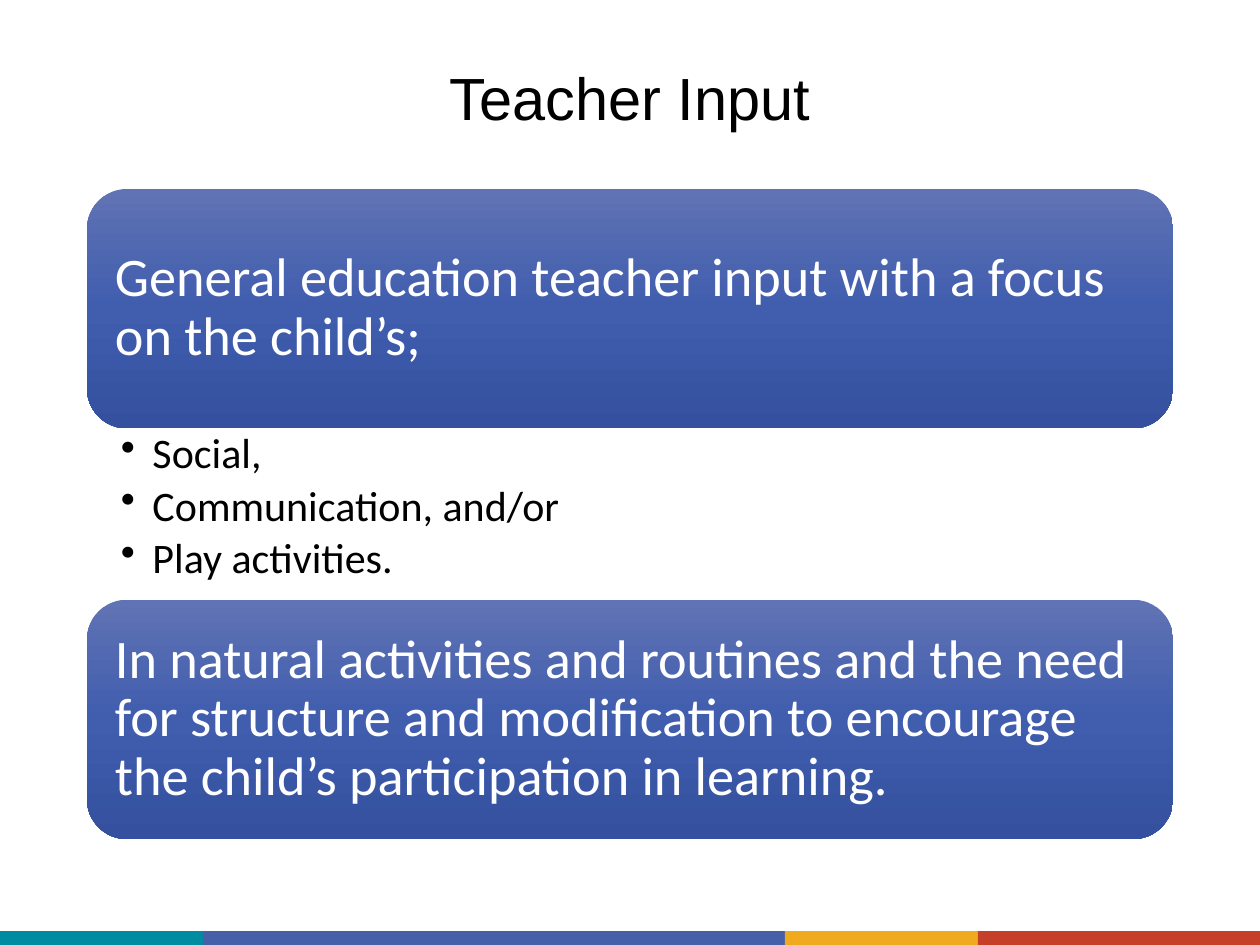
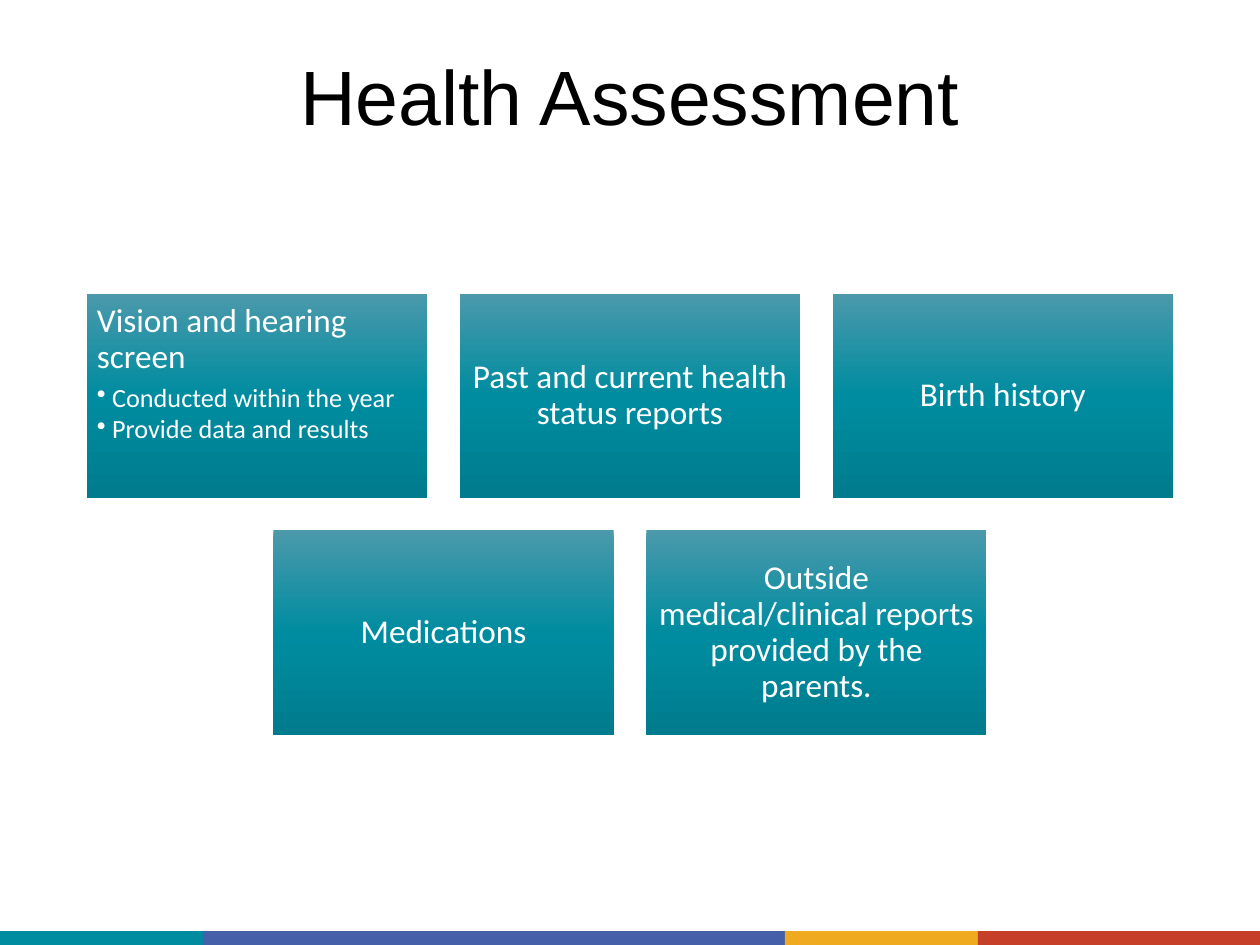
from copy import deepcopy

from pptx import Presentation
from pptx import util as u
from pptx.dml.color import RGBColor
from pptx.enum import shapes, text
from pptx.oxml.ns import qn

WHITE, BLACK = "FFFFFF", "000000"
BLUE_FADE = ("6073B4", "405DAE", "34509F")
TEAL_FADE = ("4B99AB", "008CA0", "007C8E")
BANDS = (("008CA0", 1.61), ("455FA9", 4.62), ("EFAA1F", 1.53), ("C63F28", 2.24))
LEFT, WIDTH = 0.69, 8.62
CENTER, MIDDLE = text.PP_ALIGN.CENTER, text.MSO_ANCHOR.MIDDLE
TOP = text.MSO_ANCHOR.TOP


def color(value):
    return RGBColor.from_string(value)


class Deck:
    title_font, body_font = "Arial", "Calibri"
    line_spacing = 0.9

    def __init__(self):
        self.deck = Presentation()
        self.deck.slide_width, self.deck.slide_height = u.Inches(10), u.Inches(7.5)
        self.page = None

    def add_page(self, title, size):
        self.page = self.deck.slides.add_slide(self.deck.slide_layouts[6])
        left = 0
        for fill, width in BANDS:
            band = self.shape("RECTANGLE", left, 7.39, width, 0.11)
            band.fill.solid()
            band.fill.fore_color.rgb = color(fill)
            left += width
        box = self.text_box(LEFT, 0.4, WIDTH, 0.8)
        self.frame(box, MIDDLE, (0.1, 0.05, 0.1, 0.05))
        self.add_para(box, title, size, BLACK, align=CENTER, font=self.title_font)

    def shape(self, kind, left, top, width, height):
        box = self.page.shapes.add_shape(
            shapes.MSO_SHAPE[kind], *map(u.Inches, (left, top, width, height)))
        box.shadow.inherit = False
        box.line.fill.background()
        return box

    def text_box(self, left, top, width, height):
        return self.page.shapes.add_textbox(*map(u.Inches, (left, top, width, height)))

    def frame(self, box, anchor, insets):
        frame = box.text_frame
        frame.word_wrap = True
        frame.vertical_anchor = anchor
        frame.margin_left, frame.margin_top, frame.margin_right, frame.margin_bottom = map(
            u.Inches, insets)

    def panel(self, kind, place, fade, inset, anchor=MIDDLE):
        box = self.shape(kind, *place)
        box.fill.gradient()
        box.fill.gradient_angle = 270
        first = box._element.spPr.find(qn("a:gradFill")).find(qn("a:gsLst"))[0]
        first.addnext(deepcopy(first))
        for stop, position, value in zip(box.fill.gradient_stops, (0, 0.5, 1), fade):
            stop.position = position
            stop.color.rgb = color(value)
        self.frame(box, anchor, (inset,) * 4)
        return box

    def add_para(self, box, words, size, ink, gap=0, align=text.PP_ALIGN.LEFT,
                 indent=0, font=None):
        frame = box.text_frame
        para = frame.add_paragraph() if frame.text else frame.paragraphs[0]
        para.text = words
        if indent:
            properties = para._p.get_or_add_pPr()
            properties.set("marL", str(u.Inches(indent)))
            properties.set("indent", str(-u.Inches(indent)))
            bullet = properties.makeelement(qn("a:buChar"), {"char": "•"})
            properties.append(bullet)
        para.alignment = align
        para.line_spacing = self.line_spacing
        para.space_after = u.Pt(gap)
        para.font.name = font or self.body_font
        para.font.size = u.Pt(size)
        para.font.color.rgb = color(ink)


def teacher_input(deck):
    deck.add_page("Teacher Input", 34)
    statements = (
        (1.5, "General education teacher input with a focus on the child’s;"),
        (4.76, "In natural activities and routines and the need for structure and "
               "modification to encourage the child’s participation in learning."),
    )
    for top, words in statements:
        panel = deck.panel("ROUNDED_RECTANGLE", (LEFT, top, WIDTH, 1.9), BLUE_FADE, 0.13)
        deck.add_para(panel, words, 31, WHITE)
    focus = deck.text_box(LEFT, 3.39, WIDTH, 1.37)
    deck.frame(focus, TOP, (0.27, 0.04, 0.24, 0.04))
    for words in ("Social,", "Communication, and/or", "Play activities."):
        deck.add_para(focus, words, 24, BLACK, gap=4.2, indent=0.25)


def health_assessment(deck):
    deck.add_page("Health Assessment", 44)
    width, height, gap = 2.7, 1.62, 0.26
    rows = (
        (("Vision and hearing screen", "Conducted within the year",
          "Provide data and results"),
         ("Past and current health status reports",), ("Birth history",)),
        (("Medications",),
         ("Outside medical/clinical reports provided by the parents.",)),
    )
    for row, cards in enumerate(rows):
        start = 5 - (len(cards) * (width + gap) - gap) / 2
        for column, (heading, *details) in enumerate(cards):
            place = (start + column * (width + gap), 2.33 + row * (height + gap),
                     width, height)
            card = deck.panel("RECTANGLE", place, TEAL_FADE, 0.08,
                              TOP if details else MIDDLE)
            deck.add_para(card, heading, 19, WHITE, gap=5.3 if details else 0,
                          align=text.PP_ALIGN.LEFT if details else CENTER)
            for detail in details:
                deck.add_para(card, detail, 15, WHITE, gap=1.8, indent=0.12)


def main():
    deck = Deck()
    teacher_input(deck)
    health_assessment(deck)
    deck.deck.save("out.pptx")


if __name__ == "__main__":
    main()
